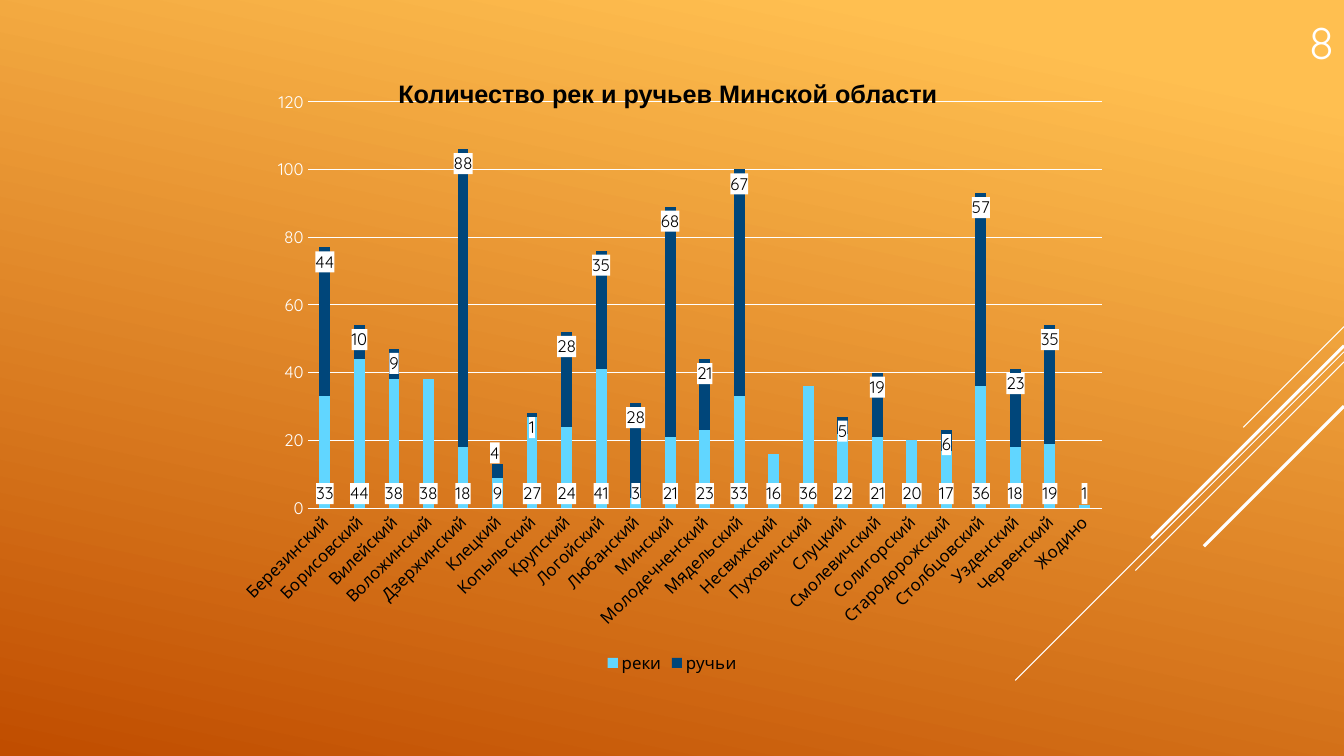
from dataclasses import dataclass

import pptx
import pptx.chart.data
import pptx.dml.color
import pptx.enum.chart
import pptx.enum.shapes
import pptx.enum.text
import pptx.oxml
import pptx.oxml.ns
import pptx.util
from pptx.util import Inches

Color = pptx.dml.color.RGBColor.from_string


@dataclass(frozen=True)
class Theme:
    white: str = "FFFFFF"
    black: str = "000000"
    glow: str = "FFBF50"
    ember: str = "C04D00"
    rivers: str = "61D6FF"
    streams: str = "00467A"
    body_font: str = "Quicksand"
    title_font: str = "Arial"
    chart_size: int = 12
    title_size: int = 18
    number_size: int = 32


THEME = Theme()
SLIDE_WIDTH, SLIDE_HEIGHT = 13.33, 7.5
TITLE = "Количество рек и ручьев Минской области"
DISTRICTS = [
    ("Березинский", 33, 44), ("Борисовский", 44, 10), ("Вилейский", 38, 9),
    ("Воложинский", 38, None), ("Дзержинский", 18, 88), ("Клецкий", 9, 4),
    ("Копыльский", 27, 1), ("Крупский", 24, 28), ("Логойский", 41, 35),
    ("Любанский", 3, 28), ("Минский", 21, 68), ("Молодечненский", 23, 21),
    ("Мядельский", 33, 67), ("Несвижский", 16, None), ("Пуховичский", 36, None),
    ("Слуцкий", 22, 5), ("Смолевичский", 21, 19), ("Солигорский", 20, None),
    ("Стародорожский", 17, 6), ("Столбцовский", 36, 57), ("Узденский", 18, 23),
    ("Червенский", 19, 35), ("Жодино", 1, None),
]
RAISED_LABEL = 5
# Diagonals from the right edge: top, horizontal run, line width
DIAGONALS = [(3.24, 1, 0.75), (3.49, 3.26, 0.75), (3.59, 2.07, 0.75),
             (3.43, 1.91, 2.25), (4.03, 1.39, 2.25)]


def chart_xml(text):
    namespaces = pptx.oxml.ns.nsdecls("c", "a")
    tag, rest = text.split(">", 1)
    return pptx.oxml.parse_xml(f"{tag} {namespaces}>{rest}")


def manual_layout(x, y, size="", target=""):
    return chart_xml(
        f'<c:layout><c:manualLayout>{target}<c:x val="{x}"/><c:y val="{y}"/>{size}'
        "</c:manualLayout></c:layout>")


def style_font(font, size, color, name=THEME.body_font, bold=False):
    font.size = pptx.util.Pt(size)
    font.name = name
    font.bold = bold
    font.color.rgb = Color(color)


def style_line(line, width):
    line.color.rgb = Color(THEME.white)
    line.width = pptx.util.Pt(width)


def paint_background(slide):
    fill = slide.background.fill
    fill.gradient()
    fill.gradient_angle = 258
    for stop, position, color in zip(fill.gradient_stops, (0.1, 1), (THEME.glow, THEME.ember)):
        stop.position = position
        stop.color.rgb = Color(color)


def add_diagonals(slide, right):
    for top, run, width in DIAGONALS:
        line = slide.shapes.add_connector(
            pptx.enum.shapes.MSO_CONNECTOR.STRAIGHT,
            Inches(right), Inches(top), Inches(right - run), Inches(top + run))
        style_line(line.line, width)
        properties = line._element.spPr
        properties.append(properties.makeelement(pptx.oxml.ns.qn("a:effectLst"), {}))


def add_slide_number(slide, left, top, width, height):
    box = slide.shapes.add_textbox(Inches(left), Inches(top), Inches(width), Inches(height))
    frame = box.text_frame
    frame.word_wrap = True
    frame.vertical_anchor = pptx.enum.text.MSO_ANCHOR.BOTTOM
    paragraph = frame.paragraphs[0]
    paragraph.alignment = pptx.enum.text.PP_ALIGN.RIGHT
    run = paragraph.add_run()
    run.text = "8"
    style_font(run.font, THEME.number_size, THEME.white)


def style_axes(chart):
    category_axis, value_axis = chart.category_axis, chart.value_axis
    for axis, color in ((category_axis, THEME.black), (value_axis, THEME.white)):
        axis.major_tick_mark = axis.minor_tick_mark = pptx.enum.chart.XL_TICK_MARK.NONE
        style_font(axis.tick_labels.font, THEME.chart_size, color)
        body = axis._element.xpath("./c:txPr/a:bodyPr")[0]
        body.set("rot", "-60000000")
        body.set("vert", "horz")
    style_line(category_axis.format.line, 0.75)
    value_axis.minimum_scale, value_axis.maximum_scale = 0, 120
    value_axis.major_unit = 20
    value_axis.format.line.fill.background()
    style_line(value_axis.major_gridlines.format.line, 0.75)


def style_series(series, color, position):
    series.format.fill.solid()
    series.format.fill.fore_color.rgb = Color(color)
    labels = series.data_labels
    labels.show_value = True
    labels.position = position
    style_font(labels.font, THEME.chart_size, THEME.black)


def raise_label(series, index, position):
    label = series.points[index].data_label
    style_font(label.font, THEME.chart_size, THEME.black)
    label.position = position
    series._element.xpath(".//c:dLbl/c:idx")[0].addnext(manual_layout(-0.003, -0.043))


def whiten_labels(series):
    for text_properties in series._element.xpath(".//c:dLbls//c:txPr"):
        text_properties.addprevious(chart_xml(
            f'<c:spPr><a:solidFill><a:srgbClr val="{THEME.white}"/></a:solidFill></c:spPr>'))


def add_rivers_chart(slide, left, top, width, height):
    names, rivers, streams = zip(*DISTRICTS)
    data = pptx.chart.data.CategoryChartData()
    data.categories = names
    data.add_series("реки", rivers)
    data.add_series("ручьи", streams)
    chart = slide.shapes.add_chart(
        pptx.enum.chart.XL_CHART_TYPE.COLUMN_STACKED,
        Inches(left), Inches(top), Inches(width), Inches(height), data).chart
    chart.has_title = False
    style_font(chart.font, THEME.chart_size, THEME.white)
    style_axes(chart)

    plot = chart.plots[0]
    plot.gap_width, plot.overlap = 219, 100
    plot.vary_by_categories = False
    positions = pptx.enum.chart.XL_LABEL_POSITION
    river_series, stream_series = plot.series
    style_series(river_series, THEME.rivers, positions.INSIDE_BASE)
    style_series(stream_series, THEME.streams, positions.INSIDE_END)
    raise_label(stream_series, RAISED_LABEL, positions.INSIDE_END)
    for series in plot.series:
        whiten_labels(series)

    chart.has_legend = True
    chart.legend.position = pptx.enum.chart.XL_LEGEND_POSITION.BOTTOM
    chart.legend.include_in_layout = False
    style_font(chart.legend.font, THEME.chart_size, THEME.black)

    plot_area = chart._chartSpace.xpath(".//c:plotArea")[0]
    for layout in plot_area.xpath("./c:layout"):
        plot_area.remove(layout)
    plot_area.insert(0, manual_layout(
        0.0935, 0.037, '<c:w val="0.886"/><c:h val="0.68"/>',
        '<c:layoutTarget val="inner"/><c:xMode val="edge"/><c:yMode val="edge"/>'))


def place_title(slide, left, top, width, height):
    """Fill the title placeholder and bring it in front of the chart."""
    title = slide.shapes.title
    title.left, title.top = Inches(left), Inches(top)
    title.width, title.height = Inches(width), Inches(height)
    frame = title.text_frame
    frame.word_wrap = False
    frame.auto_size = pptx.enum.text.MSO_AUTO_SIZE.SHAPE_TO_FIT_TEXT
    frame.vertical_anchor = pptx.enum.text.MSO_ANCHOR.TOP
    paragraph = frame.paragraphs[0]
    paragraph.alignment = pptx.enum.text.PP_ALIGN.LEFT
    run = paragraph.add_run()
    run.text = TITLE
    style_font(run.font, THEME.title_size, THEME.black, THEME.title_font, bold=True)
    title.element.getparent().append(title.element)


def main():
    presentation = pptx.Presentation()
    presentation.slide_width = Inches(SLIDE_WIDTH)
    presentation.slide_height = Inches(SLIDE_HEIGHT)
    slide = presentation.slides.add_slide(presentation.slide_layouts.get_by_name("Title Only"))
    paint_background(slide)
    add_diagonals(slide, SLIDE_WIDTH)
    add_slide_number(slide, 12.08, 0, 1.25, 0.73)
    add_rivers_chart(slide, 2.22, 0.79, 8.89, 5.93)
    place_title(slide, 3.85, 0.73, 5.76, 0.4)
    presentation.save("out.pptx")


if __name__ == "__main__":
    main()
